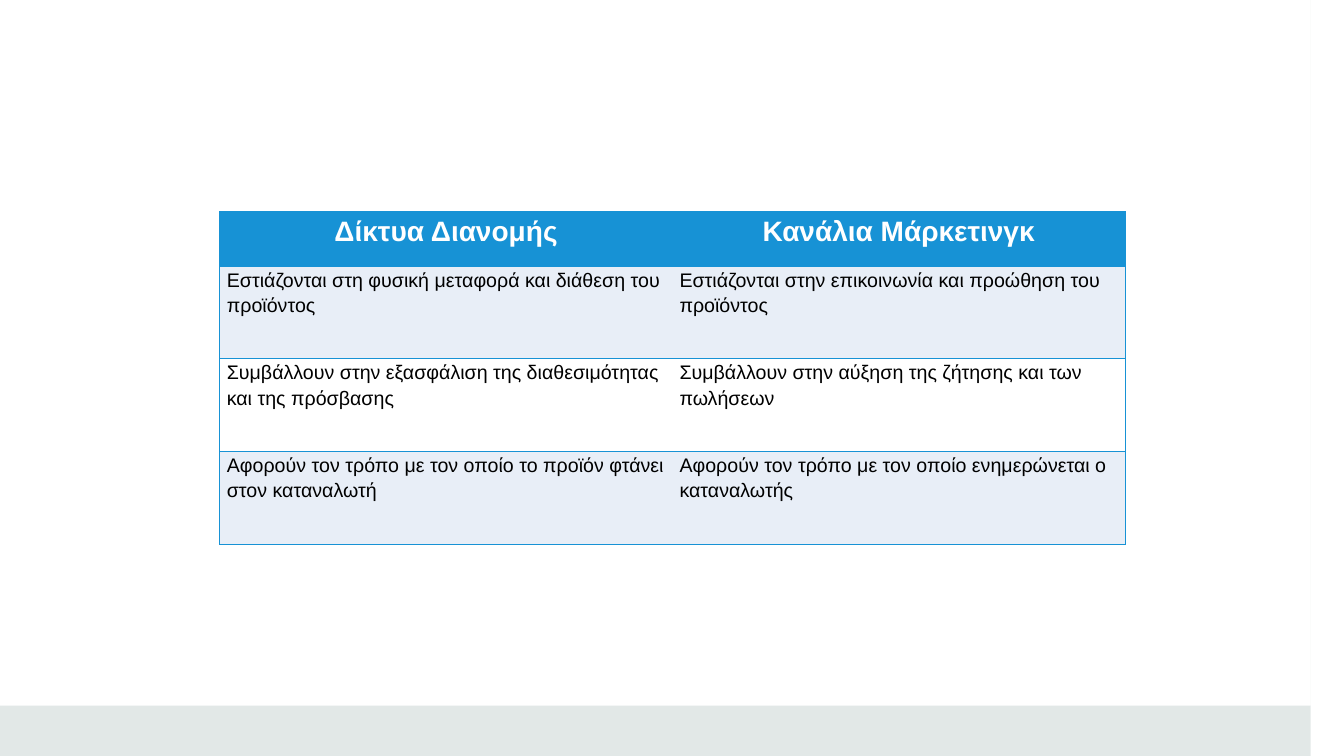
from dataclasses import dataclass

from lxml.etree import SubElement
from pptx import Presentation
from pptx.dml.color import RGBColor
from pptx.enum.text import PP_ALIGN
from pptx.oxml.ns import qn
from pptx.slide import Slide
from pptx.table import Table, _Cell
from pptx.util import Inches, Pt

BLUE = RGBColor(0x17, 0x92, 0xD5)
PALE_BLUE = RGBColor(0xE8, 0xEE, 0xF7)
WHITE = RGBColor(0xFF, 0xFF, 0xFF)
BLACK = RGBColor(0x00, 0x00, 0x00)
FRAME_GREY = RGBColor(0xE2, 0xE8, 0xE7)

PAGE_WIDTH, PAGE_HEIGHT = 13.33, 7.5
FRAME_SIDE, FRAME_TOP = 0.18, 0.17
TABLE_LEFT, TABLE_TOP = 2.18, 2.1
COLUMN_WIDTH = 4.49
PLAIN_TABLE_STYLE = "{2D5ABB26-0587-4C30-8999-92F81FD0307C}"

CELL_MARGINS = {
    "margin_left": Inches(0.07),
    "margin_right": Inches(0.07),
    "margin_top": 0,
    "margin_bottom": 0,
}


@dataclass(frozen=True)
class RowStyle:
    height: float
    fill: RGBColor
    alignment: PP_ALIGN
    font: dict
    color: RGBColor


HEADER_FONT = {"name": "Arial", "size": Pt(20), "bold": True}
BODY_FONT = {"name": "Arial", "size": Pt(14), "bold": False}
HEADER = RowStyle(0.54, BLUE, PP_ALIGN.CENTER, HEADER_FONT, WHITE)
SHADED = RowStyle(0.92, PALE_BLUE, PP_ALIGN.LEFT, BODY_FONT, BLACK)
PLAIN = RowStyle(0.92, WHITE, PP_ALIGN.LEFT, BODY_FONT, BLACK)

ROWS = [
    (HEADER, ("Δίκτυα Διανομής", "Κανάλια Μάρκετινγκ")),
    (SHADED, ("Εστιάζονται στη φυσική μεταφορά και διάθεση του προϊόντος",
              "Εστιάζονται στην επικοινωνία και προώθηση του προϊόντος")),
    (PLAIN, ("Συμβάλλουν στην εξασφάλιση της διαθεσιμότητας και της πρόσβασης",
             "Συμβάλλουν στην αύξηση της ζήτησης και των πωλήσεων")),
    (SHADED, ("Αφορούν τον τρόπο με τον οποίο το προϊόν φτάνει στον καταναλωτή",
              "Αφορούν τον τρόπο με τον οποίο ενημερώνεται ο καταναλωτής")),
]


def set_attributes(target: object, values: dict) -> None:
    for name, value in values.items():
        setattr(target, name, value)


def draw_frame(page: Slide) -> None:
    right, bottom = PAGE_WIDTH - FRAME_SIDE, PAGE_HEIGHT - FRAME_TOP
    builder = page.shapes.build_freeform(0, 0, scale=Inches(1))
    builder.add_line_segments(
        [(PAGE_WIDTH, 0), (PAGE_WIDTH, PAGE_HEIGHT), (0, PAGE_HEIGHT)])
    # The inner outline runs the other way, which leaves a hole
    builder.move_to(FRAME_SIDE, FRAME_TOP)
    builder.add_line_segments(
        [(FRAME_SIDE, bottom), (right, bottom), (right, FRAME_TOP)])
    frame = builder.convert_to_shape()
    frame.shadow.inherit = False
    frame.fill.solid()
    frame.fill.fore_color.rgb = FRAME_GREY
    frame.line.fill.background()


def draw_borders(cell: _Cell, sides: str) -> None:
    properties = cell._tc.get_or_add_tcPr()
    for side in "LRTB":
        line = SubElement(properties, qn(f"a:ln{side}"), w=str(Pt(1)))
        if side in sides:
            fill = SubElement(line, qn("a:solidFill"))
            SubElement(fill, qn("a:srgbClr"), val=str(BLUE))
        else:
            SubElement(line, qn("a:noFill"))


def fill_cell(cell: _Cell, text: str, style: RowStyle, sides: str) -> None:
    set_attributes(cell, CELL_MARGINS)
    draw_borders(cell, sides)
    cell.fill.solid()
    cell.fill.fore_color.rgb = style.fill
    para = cell.text_frame.paragraphs[0]
    set_attributes(para, {"alignment": style.alignment,
                          "line_spacing": 1.15, "space_after": Pt(8)})
    span = para.add_run()
    span.text = text
    set_attributes(span.font, style.font)
    span.font.color.rgb = style.color


def draw_table(page: Slide) -> Table:
    column_count = len(ROWS[0][1])
    height = sum(style.height for style, _ in ROWS)
    frame = page.shapes.add_table(
        len(ROWS), column_count, Inches(TABLE_LEFT), Inches(TABLE_TOP),
        Inches(COLUMN_WIDTH * column_count), Inches(height))
    table = frame.table
    table.horz_banding = False
    table._tbl.tblPr.find(qn("a:tableStyleId")).text = PLAIN_TABLE_STYLE
    for column in table.columns:
        column.width = Inches(COLUMN_WIDTH)
    for row, (style, texts) in zip(table.rows, ROWS):
        row.height = Inches(style.height)
        for cell, text, outer_side in zip(row.cells, texts, "LR"):
            fill_cell(cell, text, style, outer_side + "TB")
    return table


def main() -> None:
    deck = Presentation()
    deck.slide_width = Inches(PAGE_WIDTH)
    deck.slide_height = Inches(PAGE_HEIGHT)
    page = deck.slides.add_slide(deck.slide_layouts[6])
    page.background.fill.solid()
    page.background.fill.fore_color.rgb = WHITE

    draw_frame(page)
    draw_table(page)
    deck.save("out.pptx")


if __name__ == "__main__":
    main()
